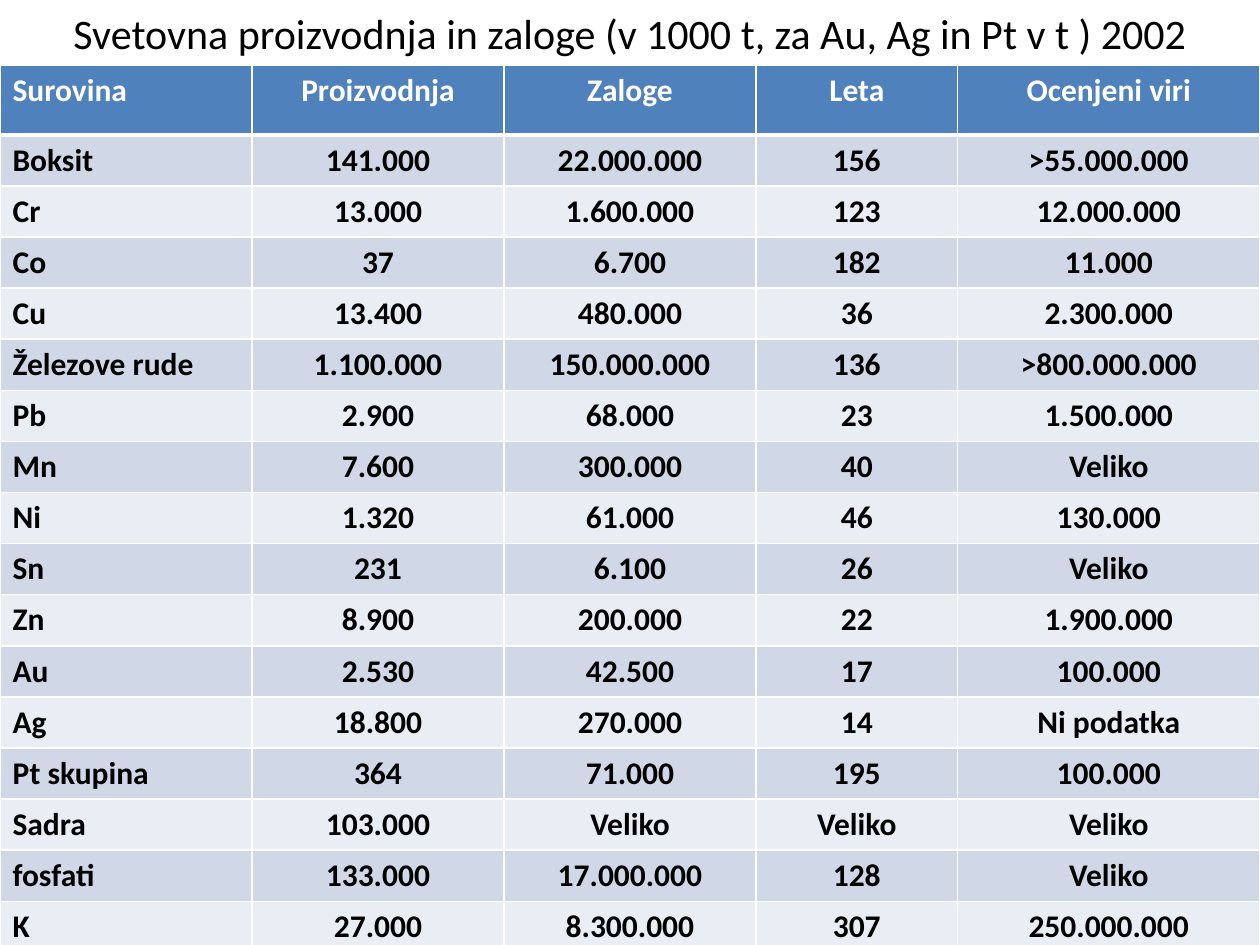
from dataclasses import dataclass
from lxml.etree import SubElement
from pptx import Presentation
from pptx.dml.color import RGBColor
from pptx.enum.text import MSO_ANCHOR, PP_ALIGN
from pptx.oxml.ns import qn
from pptx.util import Inches, Pt

TITLE = "Svetovna proizvodnja in zaloge (v 1000 t, za Au, Ag in Pt v t ) 2002"
HEADER = ("Surovina", "Proizvodnja", "Zaloge", "Leta", "Ocenjeni viri")
MATERIALS = [
    ("Boksit", "141.000", "22.000.000", "156", ">55.000.000"),
    ("Cr", "13.000", "1.600.000", "123", "12.000.000"),
    ("Co", "37", "6.700", "182", "11.000"),
    ("Cu", "13.400", "480.000", "36", "2.300.000"),
    ("Železove rude", "1.100.000", "150.000.000", "136", ">800.000.000"),
    ("Pb", "2.900", "68.000", "23", "1.500.000"),
    ("Mn", "7.600", "300.000", "40", "Veliko"),
    ("Ni", "1.320", "61.000", "46", "130.000"),
    ("Sn", "231", "6.100", "26", "Veliko"),
    ("Zn", "8.900", "200.000", "22", "1.900.000"),
    ("Au", "2.530", "42.500", "17", "100.000"),
    ("Ag", "18.800", "270.000", "14", "Ni podatka"),
    ("Pt skupina", "364", "71.000", "195", "100.000"),
    ("Sadra", "103.000", "Veliko", "Veliko", "Veliko"),
    ("fosfati", "133.000", "17.000.000", "128", "Veliko"),
    ("K", "27.000", "8.300.000", "307", "250.000.000"),
]
COLUMN_SHARES = (0.2, 0.2, 0.2, 0.16, 0.24)
SLIDE_WIDTH, SLIDE_HEIGHT = Inches(10), Inches(7.5)
TITLE_HEIGHT = Inches(0.52)
HEADER_HEIGHT, ROW_HEIGHT = Inches(0.55), Inches(0.4)


@dataclass(frozen=True)
class Theme:
    font: str = "Calibri"
    title_size: int = 24
    cell_size: int = 18
    text: str = "000000"
    header_text: str = "FFFFFF"
    header_fill: str = "4F81BD"
    bands: tuple = ("D0D8E8", "E9EDF4")
    border: str = "FFFFFF"
    thin: int = 1
    thick: int = 3


THEME = Theme()


def write(frame, text, alignment, size, color, bold):
    paragraph = frame.paragraphs[0]
    paragraph.alignment = alignment
    run = paragraph.add_run()
    run.text = text
    formats = {"name": THEME.font, "size": Pt(size), "bold": bold}
    for name, value in formats.items():
        setattr(run.font, name, value)
    run.font.color.rgb = RGBColor.from_string(color)


def add_borders(cell, row):
    widths = {side: THEME.thin for side in ("lnL", "lnR", "lnT", "lnB")}
    if row < 2:
        widths["lnB" if row == 0 else "lnT"] = THEME.thick
    properties = cell._tc.get_or_add_tcPr()
    for side, width in widths.items():
        line = SubElement(properties, qn(f"a:{side}"), w=str(Pt(width)))
        fill = SubElement(line, qn("a:solidFill"))
        SubElement(fill, qn("a:srgbClr"), val=THEME.border)


def add_title(slide):
    title = slide.shapes.title
    place = {"left": 0, "top": 0, "width": SLIDE_WIDTH, "height": TITLE_HEIGHT}
    for name, value in place.items():
        setattr(title, name, value)
    title.text_frame.vertical_anchor = MSO_ANCHOR.MIDDLE
    write(title.text_frame, TITLE, PP_ALIGN.CENTER, THEME.title_size, THEME.text, False)


def add_materials_table(slide):
    rows = [HEADER, *MATERIALS]
    height = HEADER_HEIGHT + ROW_HEIGHT * len(MATERIALS)
    table = slide.shapes.add_table(
        len(rows), len(HEADER), 0, TITLE_HEIGHT, SLIDE_WIDTH, height
    ).table
    for column, share in zip(table.columns, COLUMN_SHARES):
        column.width = round(SLIDE_WIDTH * share)
    for row, values in enumerate(rows):
        is_header = row == 0
        table.rows[row].height = HEADER_HEIGHT if is_header else ROW_HEIGHT
        fill = THEME.header_fill if is_header else THEME.bands[(row - 1) % 2]
        color = THEME.header_text if is_header else THEME.text
        for column, value in enumerate(values):
            cell = table.cell(row, column)
            add_borders(cell, row)
            cell.fill.solid()
            cell.fill.fore_color.rgb = RGBColor.from_string(fill)
            alignment = PP_ALIGN.CENTER if column else PP_ALIGN.LEFT
            write(cell.text_frame, value, alignment, THEME.cell_size, color, True)


def main():
    presentation = Presentation()
    presentation.slide_width, presentation.slide_height = SLIDE_WIDTH, SLIDE_HEIGHT
    slide = presentation.slides.add_slide(presentation.slide_layouts.get_by_name("Title Only"))
    add_title(slide)
    add_materials_table(slide)
    presentation.save("out.pptx")


if __name__ == "__main__":
    main()
